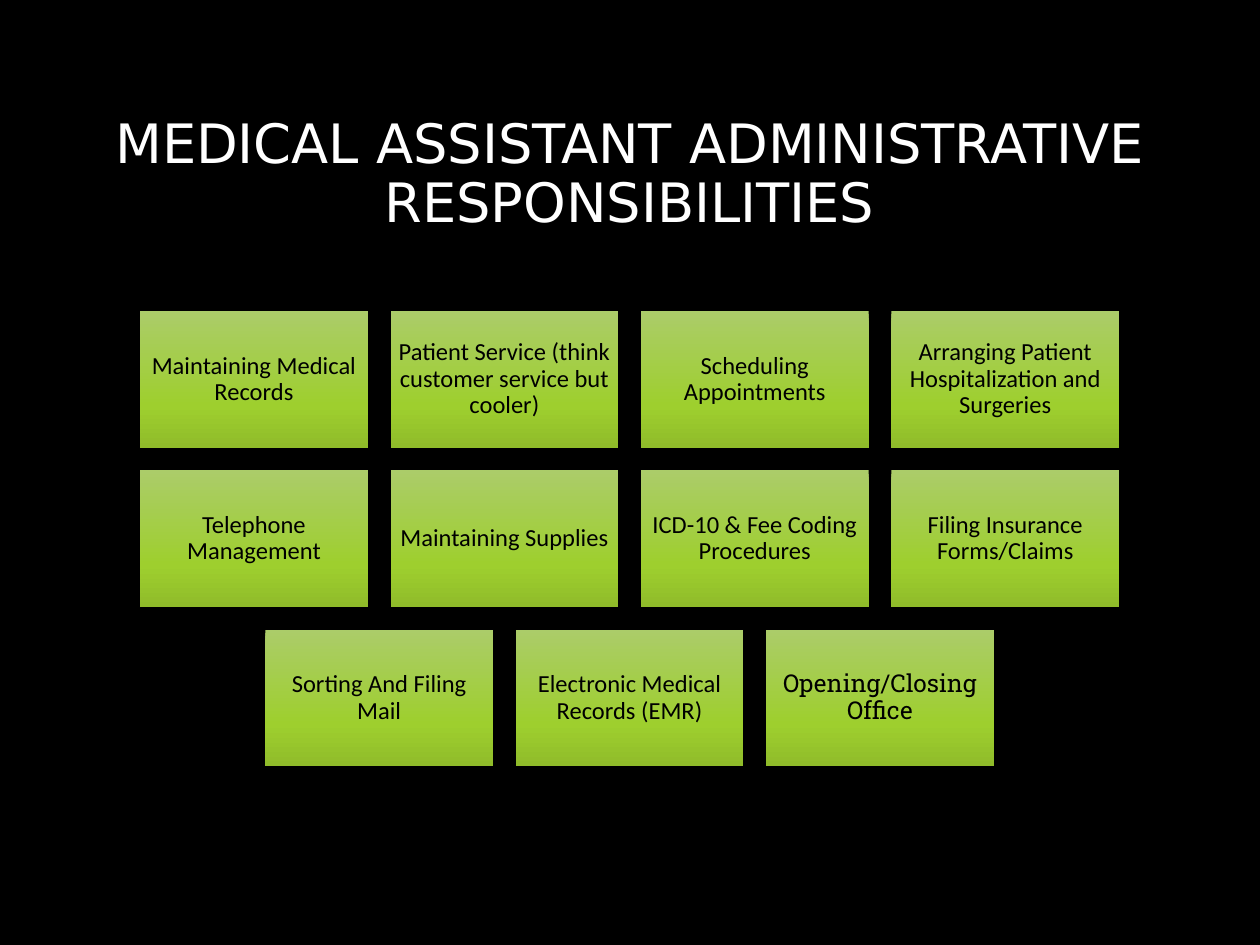
"""Build a slide listing the administrative responsibilities of a medical assistant."""
from copy import deepcopy

from pptx import Presentation
from pptx.dml.color import RGBColor
from pptx.enum.shapes import MSO_SHAPE
from pptx.enum.text import MSO_ANCHOR, MSO_AUTO_SIZE, PP_ALIGN
from pptx.util import Pt

TITLE = "MEDICAL ASSISTANT ADMINISTRATIVE RESPONSIBILITIES"
ROWS = [
    ["Maintaining Medical Records", "Patient Service (think customer service but cooler)",
     "Scheduling Appointments", "Arranging Patient Hospitalization and Surgeries"],
    ["Telephone Management", "Maintaining Supplies",
     "ICD-10 & Fee Coding Procedures", "Filing Insurance Forms/Claims"],
    ["Sorting And Filing Mail", "Electronic Medical Records (EMR)", "Opening/Closing Office"],
]
SPECIAL_FONTS = {"Opening/Closing Office": "Roboto Slab"}

BLACK = RGBColor(0x00, 0x00, 0x00)
WHITE = RGBColor(0xFF, 0xFF, 0xFF)
GREEN_STOPS = [
    (0, RGBColor(0xAB, 0xCC, 0x69)),
    (0.69, RGBColor(0x9E, 0xCF, 0x2E)),
    (1, RGBColor(0x90, 0xBC, 0x2A)),
]

CENTER, TOP = 359.8, 177.8
WIDTH, HEIGHT, GAP = 130.1, 78, 13
INSET = 4.2


def write_text(shape, text, font_name, size, color):
    frame = shape.text_frame
    frame.text = text
    frame.word_wrap = True
    frame.auto_size = MSO_AUTO_SIZE.NONE
    frame.vertical_anchor = MSO_ANCHOR.MIDDLE
    paragraph = frame.paragraphs[0]
    paragraph.alignment = PP_ALIGN.CENTER
    paragraph.line_spacing = 0.9
    paragraph.font.name = font_name
    paragraph.font.size = Pt(size)
    paragraph.font.color.rgb = color


def fill_green(shape):
    shape.fill.gradient()
    shape.fill.gradient_angle = 270
    stop_list = shape._element.spPr.gradFill.gsLst
    stop_list.append(deepcopy(stop_list[-1]))
    for stop, (position, color) in zip(shape.fill.gradient_stops, GREEN_STOPS):
        stop.position = position
        stop.color.rgb = color


def add_box(slide, left, top, text):
    box = slide.shapes.add_shape(MSO_SHAPE.RECTANGLE, Pt(left), Pt(top), Pt(WIDTH), Pt(HEIGHT))
    box.shadow.inherit = False
    box.line.fill.background()
    fill_green(box)
    frame = box.text_frame
    frame.margin_left = frame.margin_right = Pt(INSET)
    frame.margin_top = frame.margin_bottom = Pt(INSET)
    write_text(box, text, SPECIAL_FONTS.get(text, "Calibri"), 14, BLACK)


def main():
    presentation = Presentation()
    presentation.slide_width, presentation.slide_height = Pt(720), Pt(540)
    slide = presentation.slides.add_slide(presentation.slide_layouts.get_by_name("Title Only"))
    slide.background.fill.solid()
    slide.background.fill.fore_color.rgb = BLACK

    title = slide.shapes.title
    title.left, title.top, title.width, title.height = Pt(54), Pt(48), Pt(611.3), Pt(104.4)
    write_text(title, TITLE, "DejaVu Sans", 31, WHITE)

    for row_index, row in enumerate(ROWS):
        row_left = CENTER - (len(row) * (WIDTH + GAP) - GAP) / 2
        for column_index, text in enumerate(row):
            add_box(slide, row_left + column_index * (WIDTH + GAP),
                    TOP + row_index * (HEIGHT + GAP), text)

    presentation.save("out.pptx")


if __name__ == "__main__":
    main()
